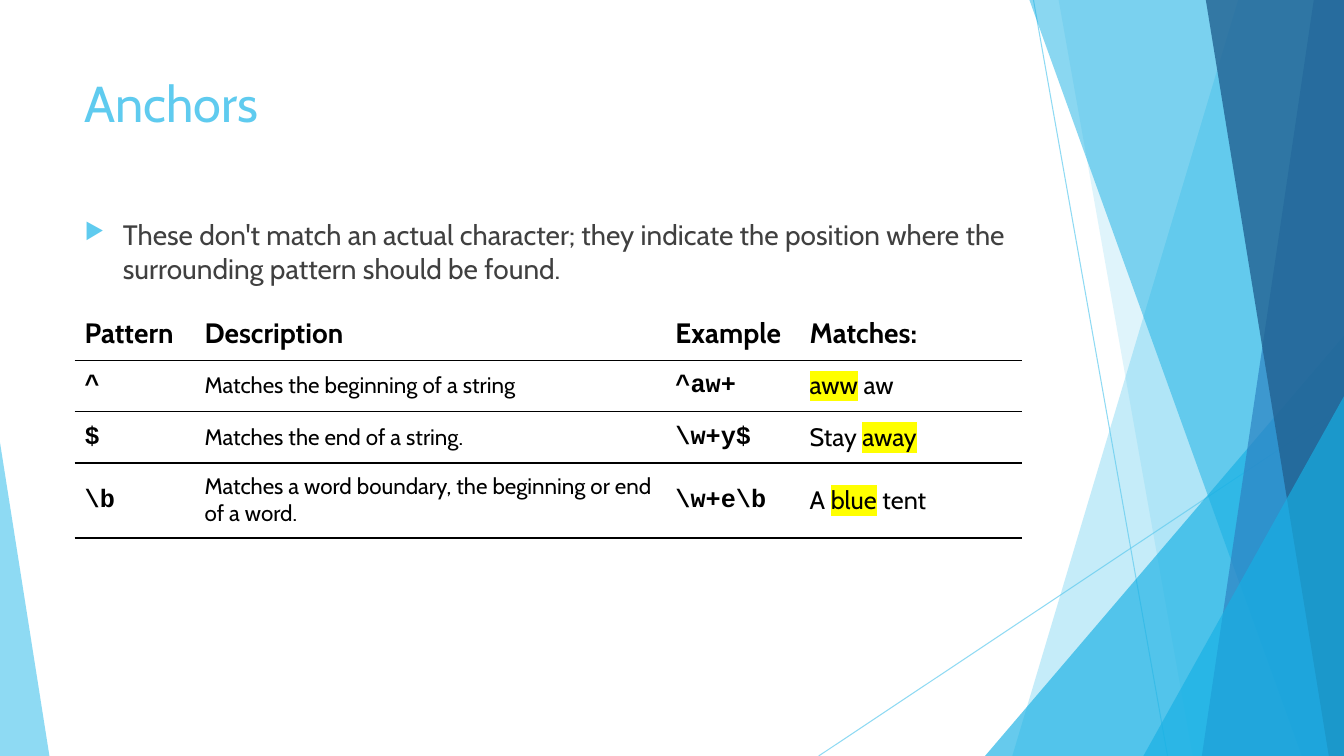
"""Build the slide on regular expression anchors."""
from lxml import etree
from pptx import Presentation
from pptx import util as u
from pptx.dml.color import RGBColor
from pptx.enum import shapes, text
from pptx.oxml import ns

SKY = RGBColor(0x5F, 0xCB, 0xEF)
CYAN = RGBColor(0x17, 0xB0, 0xE4)
BLUE = RGBColor(0x2E, 0x83, 0xC3)
NAVY = RGBColor(0x22, 0x62, 0x92)
GRAY = RGBColor(0x40, 0x40, 0x40)
BLACK = RGBColor(0, 0, 0)
YELLOW = RGBColor(0xFF, 0xFF, 0)
WIDTH, HEIGHT = 13.33, 7.5


def sub(parent, tag, **attrs):
    return etree.SubElement(parent, ns.qn(tag), attrs)


def add_run(p, words, size=18, font="Cabin", color=BLACK, bold=False, highlight=None):
    r = p.add_run()
    r.text = words
    r.font.size, r.font.name, r.font.bold = u.Pt(size), font, bold
    r.font.color.rgb = color
    if highlight is not None:
        mark = etree.Element(ns.qn("a:highlight"))
        sub(mark, "a:srgbClr", val=str(highlight))
        r.font.fill._xPr.find(ns.qn("a:latin")).addprevious(mark)


class Deck:
    def __init__(self):
        self.prs = Presentation()
        self.prs.slide_width = u.Inches(WIDTH)
        self.prs.slide_height = u.Inches(HEIGHT)
        self.s = self.prs.slides.add_slide(self.prs.slide_layouts[6])

    def set_alpha(self, sp, percent):
        color = sp._element.spPr.find(".//" + ns.qn("a:srgbClr"))
        sub(color, "a:alpha", val=str(percent * 1000))

    def paint(self, sp, color, alpha):
        sp.shadow.inherit = False
        sp.fill.solid()
        sp.fill.fore_color.rgb = color
        sp.line.fill.background()
        self.set_alpha(sp, alpha)

    def line(self, x1, y1, x2, y2):
        sp = self.s.shapes.add_connector(
            shapes.MSO_CONNECTOR.STRAIGHT, *map(u.Inches, (x1, y1, x2, y2)))
        sp.line.color.rgb = SKY
        sp.line.width = u.Pt(0.75)
        self.set_alpha(sp, 70)
        sub(sp._element.spPr, "a:effectLst")

    def band(self, top_x, bottom_x, color, alpha):
        points = [(top_x, 0), (WIDTH, 0), (WIDTH, HEIGHT), (bottom_x, HEIGHT)]
        points = [(u.Inches(x), u.Inches(y)) for x, y in points]
        builder = self.s.shapes.build_freeform(*points[0])
        builder.add_line_segments(points[1:])
        self.paint(builder.convert_to_shape(), color, alpha)

    def triangle(self, x, y, w, apex, color, alpha):
        sp = self.s.shapes.add_shape(
            shapes.MSO_SHAPE.ISOSCELES_TRIANGLE, *map(u.Inches, (x, y, w, HEIGHT - y)))
        sp.adjustments[0] = apex
        self.paint(sp, color, alpha)

    def textbox(self, x, y, w, h, words, bullet=None, **style):
        sp = self.s.shapes.add_textbox(*map(u.Inches, (x, y, w, h)))
        tf = sp.text_frame
        tf.word_wrap = True
        p = tf.paragraphs[0]
        if bullet:
            p.space_before = u.Pt(10)
            pPr = p._p.get_or_add_pPr()
            pPr.set("marL", str(u.Inches(0.38)))
            pPr.set("indent", str(-u.Inches(0.38)))
            sub(sub(pPr, "a:buClr"), "a:srgbClr", val=str(SKY))
            sub(pPr, "a:buSzPct", val="80000")
            sub(pPr, "a:buChar", char=bullet)
        add_run(p, words, **style)

    def border(self, cell, top, bottom):
        tcPr = cell._tc.get_or_add_tcPr()
        for side, width in (("L", 0), ("R", 0), ("T", top), ("B", bottom)):
            ln = sub(tcPr, f"a:ln{side}", w=str(u.Pt(width)))
            if width:
                sub(sub(ln, "a:solidFill"), "a:srgbClr", val=str(BLACK))
            else:
                sub(ln, "a:noFill")

    def table(self, x, y, widths, heights, rows):
        size = (sum(widths), sum(heights))
        table = self.s.shapes.add_table(
            len(rows), len(widths), *map(u.Inches, (x, y, *size))).table
        table.first_row = table.horz_banding = False
        for column, width in zip(table.columns, widths):
            column.width = u.Inches(width)
        last = len(rows) - 1
        for i, (row, height) in enumerate(zip(rows, heights)):
            table.rows[i].height = u.Inches(height)
            for j, runs in enumerate(row):
                cell = table.cell(i, j)
                cell.margin_left = cell.margin_right = u.Inches(0.1)
                cell.margin_top = cell.margin_bottom = u.Inches(0.1)
                cell.vertical_anchor = text.MSO_ANCHOR.MIDDLE if i else text.MSO_ANCHOR.TOP
                self.border(cell, 1 if i else 0, 1.5 if i == last else 1)
                cell.fill.background()
                for words, style in runs:
                    add_run(cell.text_frame.paragraphs[0], words, **style)


def main():
    deck = Deck()
    deck.line(10.25, 0, 11.58, HEIGHT)
    deck.line(WIDTH, 4.03, 8.12, HEIGHT)
    deck.band(12.28, 10.04, SKY, 36)
    deck.band(10.5, 11.83, SKY, 20)
    deck.triangle(9.77, 3.33, 3.56, 1, CYAN, 66)
    deck.band(10.21, 12.91, CYAN, 50)
    deck.band(13.03, 11.92, BLUE, 70)
    deck.band(11.96, 13.18, NAVY, 80)
    deck.triangle(11.34, 3.93, 1.99, 1, CYAN, 66)
    deck.triangle(0, 4.39, 0.49, 0, SKY, 70)

    deck.textbox(0.74, 0.67, 9.4, 1.44, "Anchors", size=36, color=SKY)
    deck.textbox(
        0.74, 2.11, 9.4, 4.5,
        "These don't match an actual character; they indicate the position "
        "where the surrounding pattern should be found.",
        bullet="▶", size=20, color=GRAY)

    head = dict(size=20, bold=True)
    code = dict(font="Courier New", bold=True)
    note = dict(size=16)
    hit = dict(highlight=YELLOW)
    anchors = [
        ("^", "Matches the beginning of a string", "^aw+",
         [("aww", hit), (" aw", {})]),
        ("$", "Matches the end of a string.", r"\w+y$",
         [("Stay ", {}), ("away", hit)]),
        (r"\b", "Matches a word boundary, the beginning or end of a word.", r"\w+e\b",
         [("A ", {}), ("blue", hit), (" tent", {})]),
    ]
    rows = [[[(name, head)] for name in ("Pattern", "Description", "Example", "Matches:")]]
    rows += [[[(pattern, code)], [(meaning, note)], [(example, code)], matches]
             for pattern, meaning, example, matches in anchors]
    deck.table(0.74, 3.04, [1.19, 4.67, 1.33, 2.21], [0.53, 0.51, 0.51, 0.74], rows)
    deck.prs.save("out.pptx")


if __name__ == "__main__":
    main()
